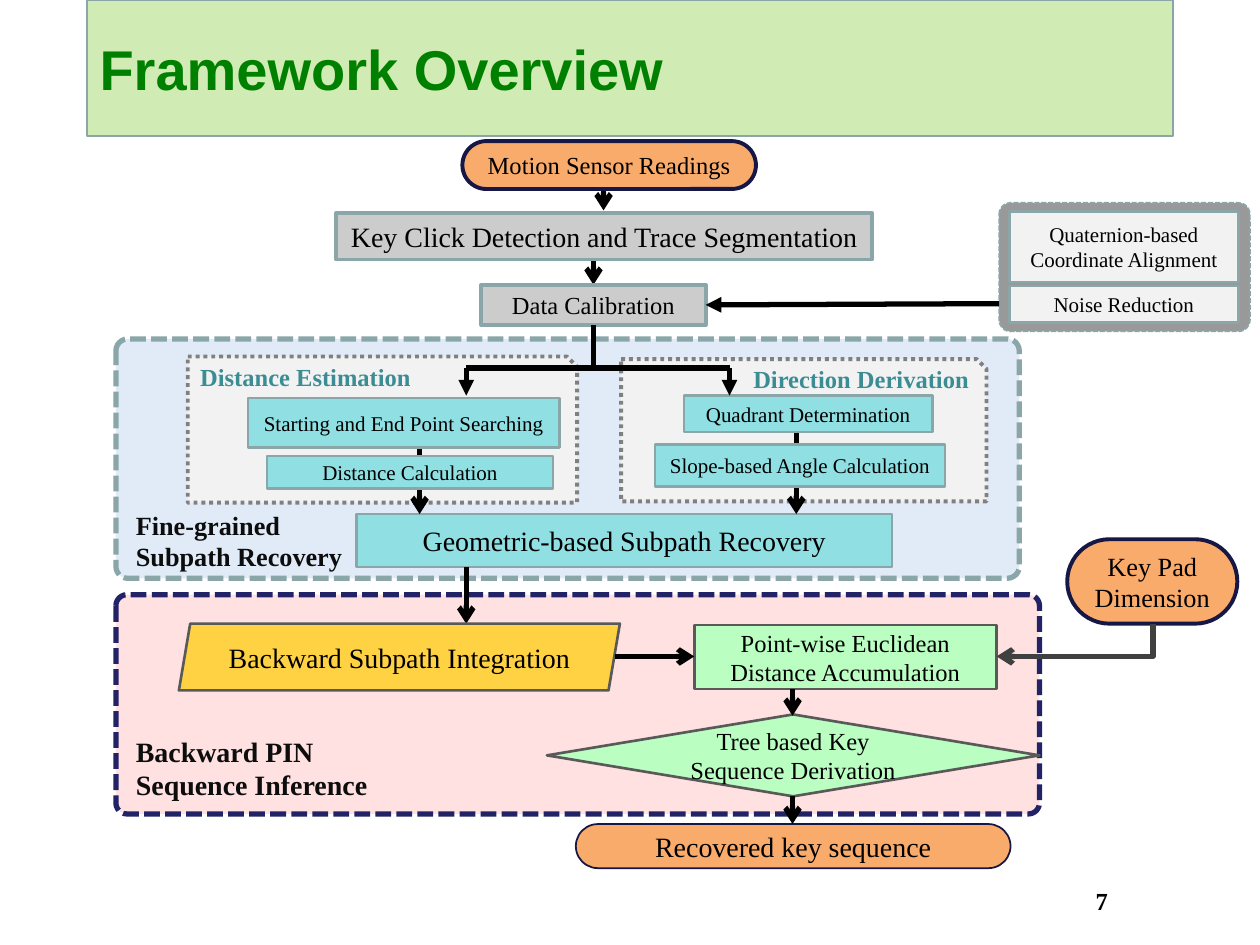
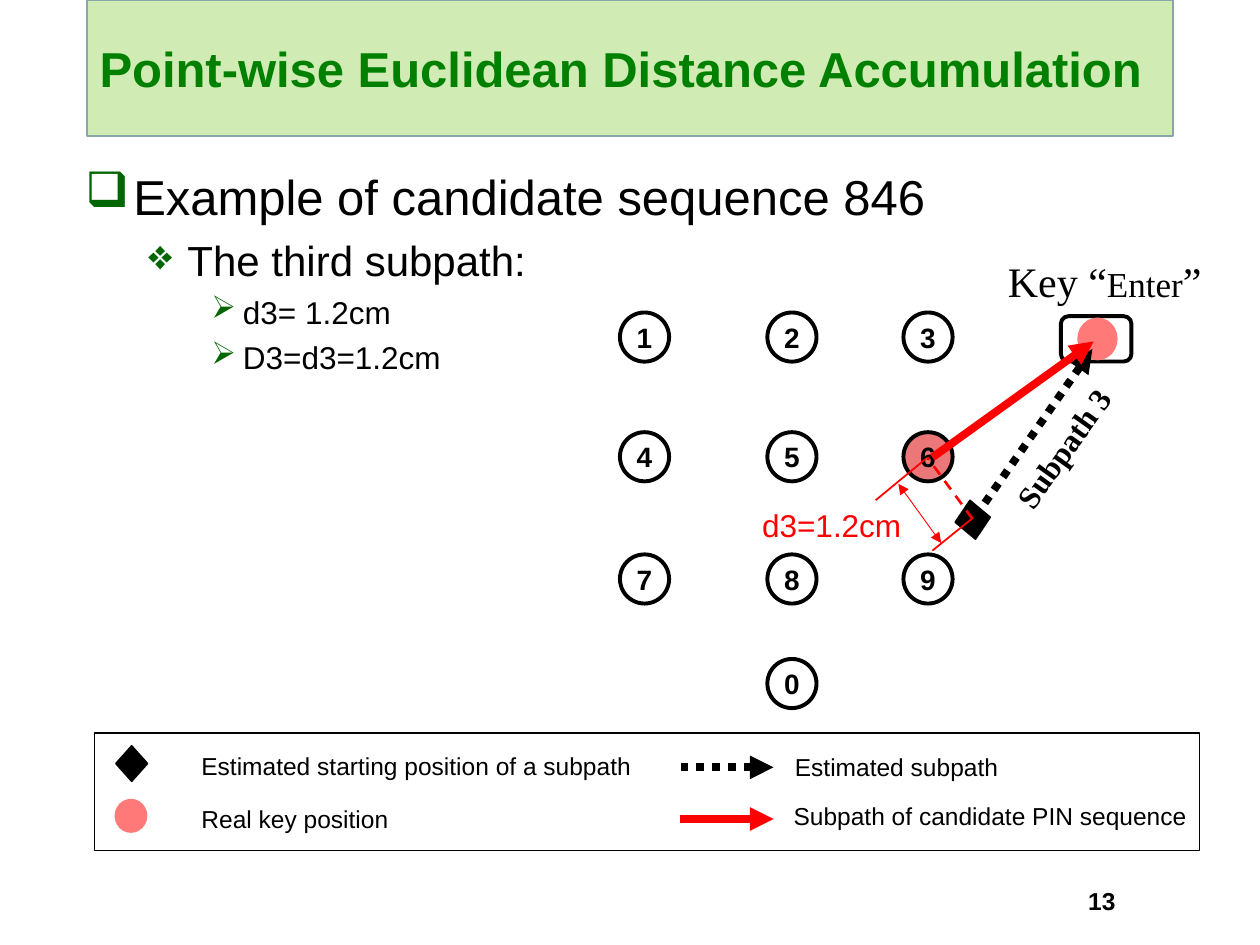
"""Build the framework overview and the distance accumulation slides."""
from dataclasses import dataclass
from functools import partial
from itertools import product
from typing import Any, Optional

from lxml import etree
from pptx import Presentation
from pptx.dml.color import RGBColor
from pptx.enum.dml import MSO_LINE as Dash
from pptx.enum.shapes import MSO_CONNECTOR as Link
from pptx.enum.shapes import MSO_SHAPE as Form
from pptx.enum.text import MSO_ANCHOR as Anchor
from pptx.enum.text import MSO_AUTO_SIZE as AutoSize
from pptx.enum.text import PP_ALIGN as Align
from pptx.oxml.ns import qn
from pptx.util import Inches, Pt

SANS, SERIF = "Arial", "Times New Roman"
COLORS = {
    "black": "000000", "ink": "0D0D0D", "band": "D0EBB3", "title": "008000",
    "bullet": "006600", "edge": "8AA6A8", "navy": "171745", "indigo": "222267",
    "rose": "FFE1E1", "sky": "E1EBF7", "orange": "F9AB6B", "silver": "CCCCCC",
    "gray": "999999", "pale": "F2F2F2", "dots": "808080", "teal": "8FDFE3",
    "heading": "3C8C93", "mint": "BAFEC2", "slate": "595959", "gold": "FFD243",
    "elbow": "404040", "red": "FF0000", "real": "FF7979", "pressed": "EB7778",
}


@dataclass(frozen=True)
class Node:
    """A shape with text, or a text box when it has no form."""
    form: Optional[Any]
    at: tuple[float, float, float, float]
    text: str = ""
    fill: Optional[str] = None
    line: Optional[str] = None
    weight: float = 1.5
    dash: Optional[Any] = None
    size: float = 14
    font: str = SERIF
    bold: bool = False
    color: str = "black"
    align: Any = Align.CENTER
    anchor: Any = Anchor.MIDDLE
    inset: tuple[float, float] = (0.1, 0.05)
    adjust: Optional[float] = None
    turn: float = 0
    wrap: bool = True


@dataclass(frozen=True)
class Arrow:
    """A straight line with optional ends."""
    start: tuple[float, float]
    end: tuple[float, float]
    tail: Optional[str] = None
    head: Optional[str] = None
    color: str = "black"
    weight: float = 3
    dash: Optional[Any] = None


def rgb(name: str) -> RGBColor:
    """Look up a named colour."""
    return RGBColor.from_string(COLORS[name])


def set_font(font: Any, color: str, **values: Any) -> None:
    """Apply font values and a colour."""
    for name, value in values.items():
        setattr(font, name, value)
    font.color.rgb = rgb(color)


def set_line(line: Any, color: Optional[str], weight: float, dash: Any = None) -> None:
    """Style an outline or hide it."""
    if color is None:
        line.fill.background()
        return
    line.color.rgb = rgb(color)
    line.width = Pt(weight)
    if dash is not None:
        line.dash_style = dash


def paint(box: Any, fill: Optional[str]) -> None:
    """Fill a shape or leave it clear."""
    if fill is None:
        box.fill.background()
    else:
        box.fill.solid()
        box.fill.fore_color.rgb = rgb(fill)


def add_span(para: Any, text: str, color: str, **values: Any) -> None:
    """Append a formatted run."""
    span = para.add_run()
    span.text = text
    set_font(span.font, color, **values)


def draw_node(page: Any, node: Node) -> Any:
    """Draw a node and return its shape."""
    place = [Inches(length) for length in node.at]
    if node.form is None:
        box = page.shapes.add_textbox(*place)
    else:
        box = page.shapes.add_shape(node.form, *place)
        box.shadow.inherit = False
        if node.adjust is not None:
            box.adjustments[0] = node.adjust
        paint(box, node.fill)
        set_line(box.line, node.line, node.weight, node.dash)
    box.rotation = node.turn
    if node.text:
        across, down = (Inches(length) for length in node.inset)
        frame_values = {
            "word_wrap": node.wrap, "vertical_anchor": node.anchor,
            "margin_left": across, "margin_right": across,
            "margin_top": down, "margin_bottom": down,
        }
        for name, value in frame_values.items():
            setattr(box.text_frame, name, value)
        para = box.text_frame.paragraphs[0]
        para.alignment = node.align
        add_span(para, node.text, node.color, name=node.font,
                 size=Pt(node.size), bold=node.bold)
    return box


def draw_arrow(page: Any, arrow: Arrow, link: Any = Link.STRAIGHT) -> Any:
    """Draw a connector with its ends and return it."""
    ends = [Inches(length) for length in (*arrow.start, *arrow.end)]
    connector = page.shapes.add_connector(link, *ends)
    set_line(connector.line, arrow.color, arrow.weight, arrow.dash)
    outline = connector.line._get_or_add_ln()
    for tag, kind in (("a:headEnd", arrow.head), ("a:tailEnd", arrow.tail)):
        if kind:
            etree.SubElement(outline, qn(tag), type=kind)
    etree.SubElement(connector._element.spPr, qn("a:effectLst"))
    return connector


def draw_elbow(page: Any, arrow: Arrow) -> None:
    """Draw a single-bend connector going down and then left."""
    (x1, y1), (x2, y2) = arrow.start, arrow.end
    middle_x, middle_y = (x1 + x2) / 2, (y1 + y2) / 2
    half_w, half_h = abs(y2 - y1) / 2, abs(x2 - x1) / 2
    turned = Arrow((middle_x - half_w, middle_y - half_h),
                   (middle_x + half_w, middle_y + half_h),
                   arrow.tail, color=arrow.color)
    properties = draw_arrow(page, turned, Link.ELBOW)._element.spPr
    properties.xfrm.rot = 90
    properties.find(qn("a:prstGeom")).set("prst", "bentConnector2")


def add_page(deck: Any, title: str, size: float, number: str, number_font: str) -> Any:
    """Add a page with its title band and number."""
    page = deck.slides.add_slide(deck.slide_layouts[5])
    band = page.shapes.title
    place = {"left": 0.69, "top": 0, "width": 8.62, "height": 1.08}
    for name, length in place.items():
        setattr(band, name, Inches(length))
    paint(band, "band")
    set_line(band.line, "edge", 1)
    band.text_frame.auto_size = AutoSize.NONE
    band.text_frame.vertical_anchor = Anchor.MIDDLE
    para = band.text_frame.paragraphs[0]
    para.alignment = Align.LEFT
    add_span(para, title, "title", name=SANS, size=Pt(size), bold=True)
    draw_node(page, Node(None, (7.58, 6.98, 2.33, 0.37), number, font=number_font,
                         bold=True, anchor=Anchor.TOP))
    return page


def build_overview(deck: Any) -> None:
    """Draw the flow from sensor readings to the key sequence."""
    page = add_page(deck, "Framework Overview", 32, "7", SERIF)
    stage = partial(Node, Form.ROUNDED_RECTANGLE, adjust=0.05, weight=3, dash=Dash.SQUARE_DOT)
    panel = partial(Node, Form.SNIP_1_RECTANGLE, fill="pale", line="dots", weight=2.25,
                    dash=Dash.ROUND_DOT, bold=True, color="heading",
                    anchor=Anchor.TOP, inset=(0.1, 0), adjust=0.07)
    pill = partial(Node, Form.ROUNDED_RECTANGLE, fill="orange", line="navy", adjust=0.5)
    step = partial(Node, Form.RECTANGLE, fill="silver", line="edge", weight=2.25)
    option = partial(Node, Form.RECTANGLE, fill="pale", line="edge", size=12)
    task = partial(Node, Form.RECTANGLE, fill="teal", line="edge", size=12)
    caption = partial(Node, None, bold=True, color="ink", align=Align.LEFT, anchor=Anchor.TOP)
    flow = partial(Arrow, tail="arrow")
    branch = partial(Arrow, tail="triangle")

    backdrop = [
        stage((0.92, 4.72, 7.33, 1.74), fill="rose", line="indigo"),
        stage((0.92, 2.69, 7.17, 1.9), fill="sky", line="edge"),
        panel((1.49, 2.83, 3.09, 1.16), "Distance Estimation", align=Align.LEFT),
        panel((4.93, 2.85, 2.9, 1.13), "Direction Derivation", align=Align.RIGHT),
        Node(Form.ROUNDED_RECTANGLE, (7.93, 1.61, 1.99, 1.02), fill="gray", line="edge",
             weight=1, dash=Dash.SQUARE_DOT, adjust=0.09),
        task((2.83, 4.08, 4.25, 0.42), "Geometric-based Subpath Recovery", size=16),
    ]
    lower_arrows = [
        flow((4.71, 2), (4.71, 2.26)),
        flow((4.79, 1.42), (4.79, 1.67)),
        flow((3.7, 4.5), (3.7, 4.95)),
        flow((3.33, 3.21), (3.33, 4.08)),
        flow((6.32, 3.21), (6.32, 4.08)),
    ]
    nodes = [
        pill((3.67, 1.12, 2.33, 0.38), "Motion Sensor Readings", weight=2.25),
        step((2.67, 1.69, 4.25, 0.37), "Key Click Detection and Trace Segmentation", size=16),
        step((3.82, 2.26, 1.78, 0.32), "Data Calibration"),
        option((8.01, 1.68, 1.82, 0.56), "Quaternion-based Coordinate Alignment",
               inset=(0, 0.05)),
        option((8.01, 2.27, 1.82, 0.29), "Noise Reduction"),
        caption((0.98, 3.99, 1.85, 0.61), "Fine-grained Subpath Recovery", size=15),
        task((1.97, 3.16, 2.47, 0.39), "Starting and End Point Searching"),
        task((2.12, 3.62, 2.27, 0.26), "Distance Calculation"),
        task((5.43, 3.14, 1.97, 0.29), "Quadrant Determination"),
        task((5.2, 3.53, 2.3, 0.33), "Slope-based Angle Calculation"),
        caption((0.98, 5.78, 2.18, 0.64), "Backward PIN Sequence Inference", size=16),
        pill((4.57, 6.54, 3.45, 0.35), "Recovered key sequence", weight=1, size=16),
        Node(Form.RECTANGLE, (5.51, 4.96, 2.4, 0.51),
             "Point-wise Euclidean Distance Accumulation", "mint", "slate"),
        pill((8.47, 4.28, 1.35, 0.67), "Key Pad Dimension", weight=2.25, size=15),
        Node(Form.PARALLELOGRAM, (1.42, 4.95, 3.5, 0.53), "Backward Subpath Integration",
             "gold", "slate", size=16, inset=(0, 0.05), adjust=0.17),
        Node(Form.FLOWCHART_DECISION, (4.34, 5.67, 3.91, 0.65),
             "Tree based Key Sequence Derivation", "mint", "slate"),
    ]
    upper_arrows = [
        flow((4.88, 5.21), (5.51, 5.21)),
        flow((6.29, 6.32), (6.29, 6.54)),
        branch((7.93, 2.41), (5.6, 2.42)),
        Arrow((4.71, 2.58), (4.71, 2.92)),
        Arrow((4.71, 2.92), (3.7, 2.92)),
        Arrow((5.79, 2.92), (4.69, 2.92)),
        branch((5.79, 2.92), (5.79, 3.14)),
        branch((3.7, 2.92), (3.7, 3.14)),
        flow((6.29, 5.47), (6.29, 5.68)),
    ]
    for node in backdrop:
        draw_node(page, node)
    for arrow in lower_arrows:
        draw_arrow(page, arrow)
    for node in nodes:
        draw_node(page, node)
    draw_elbow(page, flow((9.15, 4.95), (7.91, 5.21), color="elbow"))
    for arrow in upper_arrows:
        draw_arrow(page, arrow)


def draw_outline(page: Any) -> None:
    """Write the bulleted example."""
    styles = [("❑", 28, 0.38, 0.38, 0), ("❖", 24, 0.81, 0.31, 5.5), ("➢", 18, 1.25, 0.25, 4.3)]
    items = [(0, "Example of candidate sequence 846"), (1, "The third subpath:"),
             (2, "d3= 1.2cm"), (2, "D3=d3=1.2cm")]
    frame = page.shapes.add_textbox(*map(Inches, (0.58, 1.27, 8, 1.67))).text_frame
    frame.word_wrap = True
    for index, (level, text) in enumerate(items):
        mark, size, margin, hanging, gap = styles[level]
        para = frame.add_paragraph() if index else frame.paragraphs[0]
        para.level = level
        para.space_before = Pt(gap)
        properties = para._p.get_or_add_pPr()
        properties.set("marL", str(Inches(margin)))
        properties.set("indent", str(-Inches(hanging)))
        tint = etree.SubElement(properties, qn("a:buClr"))
        etree.SubElement(tint, qn("a:srgbClr"), val=COLORS["bullet"])
        etree.SubElement(properties, qn("a:buChar"), char=mark)
        add_span(para, text, "black", name=SANS, size=Pt(size))


def build_accumulation(deck: Any) -> None:
    """Draw the key pad, the third subpath and the legend."""
    page = add_page(deck, "Point-wise Euclidean Distance Accumulation", 28, "13", SANS)
    draw_outline(page)
    label = partial(Node, None, font=SANS, align=Align.LEFT, anchor=Anchor.TOP, wrap=False)
    real_key = partial(Node, Form.OVAL, fill="real")
    estimate = partial(Node, Form.DIAMOND, fill="black", line="black", weight=1)
    candidate = partial(Arrow, head="triangle", color="red", weight=4.5)
    estimated = partial(Arrow, head="triangle", weight=4.5, dash=Dash.ROUND_DOT)
    measure = partial(Arrow, color="red", weight=1)

    spots = [*product((2.48, 3.43, 4.4), (4.92, 6.09, 7.17)), (5.23, 6.09)]
    keys = [Node(Form.OVAL, (left, top, 0.39, 0.39), digit, "pressed" if digit == "6" else None,
                 "black", 2.25, size=16, font=SANS, bold=True, inset=(0, 0.05))
            for digit, (top, left) in zip("1234567890", spots)]
    nodes = [
        Node(Form.ROUNDED_RECTANGLE, (8.42, 2.51, 0.56, 0.36), line="black", weight=2.25),
        real_key((8.55, 2.52, 0.32, 0.34)),
        estimate((0.92, 5.92, 0.25, 0.28)),
        real_key((0.91, 6.34, 0.26, 0.27)),
        label((6.21, 5.92, 1.82, 0.34), "Estimated subpath"),
        label((6.2, 6.31, 3.34, 0.34), "Subpath of candidate PIN sequence"),
        label((1.5, 5.91, 3.63, 0.34), "Estimated starting position of a subpath"),
        label((1.5, 6.33, 1.69, 0.34), "Real key position"),
        Node(Form.RECTANGLE, (0.75, 5.82, 8.77, 0.93), line="black", weight=1),
        *keys,
        estimate((7.58, 3.97, 0.28, 0.31), turn=351.9),
        label((7.79, 3.35, 1.3, 0.4), "Subpath 3", size=18, font=SERIF, bold=True, turn=305.4),
        label((5.95, 3.97, 1.58, 0.4), "d3=1.2cm", size=18, color="red", wrap=True),
    ]
    arrows = [
        candidate((6.14, 6.5), (5.4, 6.5)),
        estimated((6.14, 6.09), (5.4, 6.09)),
        estimated((8.67, 2.77), (7.72, 4.13)),
        candidate((8.68, 2.71), (7.4, 3.63)),
        measure((7.72, 4.12), (7.36, 3.63), weight=1.5, dash=Dash.DASH),
        measure((7.35, 3.64), (6.95, 3.97)),
        measure((7.71, 4.12), (7.4, 4.37)),
        measure((7.13, 3.84), (7.47, 4.31), "triangle", "triangle", weight=0.5),
    ]
    for node in nodes:
        draw_node(page, node)
    enter = draw_node(page, label((7.9, 1.98, 2.01, 0.5), "Key “", size=24, font=SERIF, wrap=True))
    for text, size in (("Enter", 20), ("”", 24)):
        add_span(enter.text_frame.paragraphs[0], text, "black", name=SERIF, size=Pt(size))
    for arrow in arrows:
        draw_arrow(page, arrow)


def main() -> None:
    """Build and save the deck."""
    deck = Presentation()
    deck.slide_width, deck.slide_height = Inches(10), Inches(7.5)
    build_overview(deck)
    build_accumulation(deck)
    deck.save("out.pptx")


if __name__ == "__main__":
    main()
